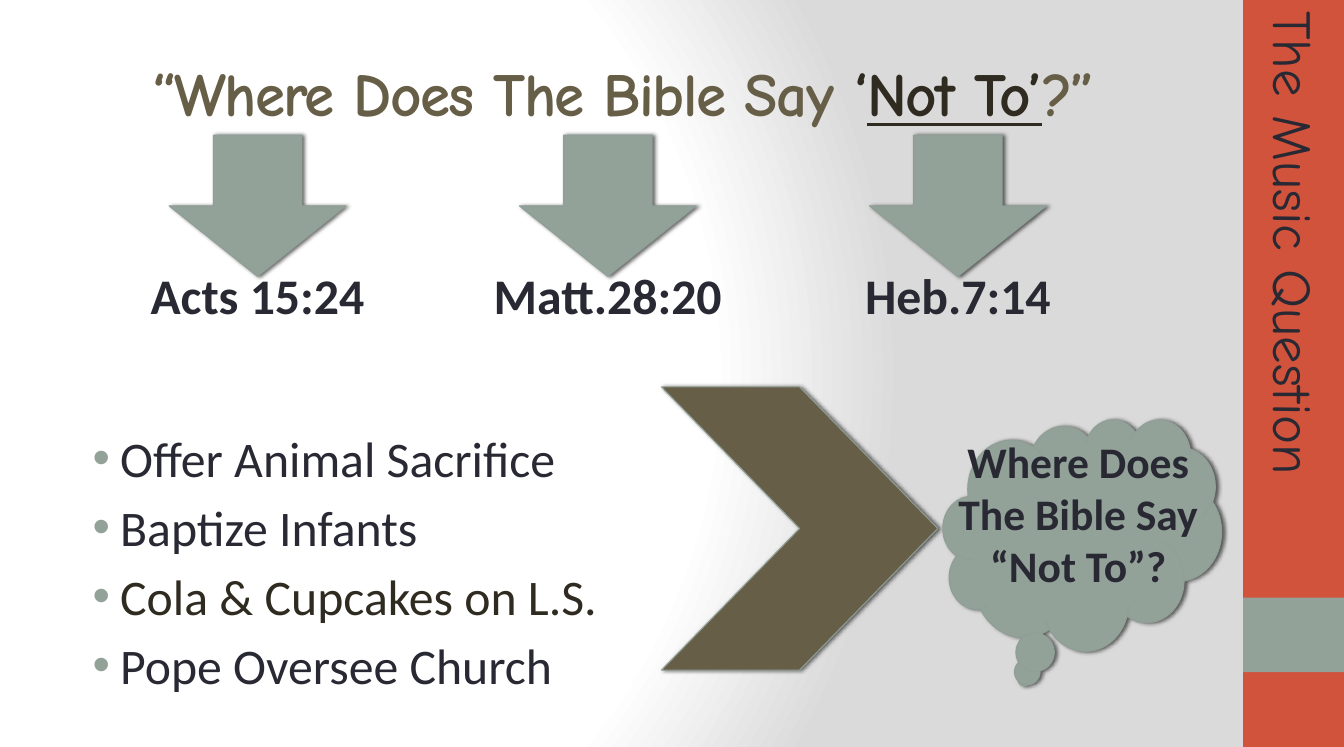
from lxml import etree
from pptx import Presentation
from pptx.dml.color import RGBColor
from pptx.enum.shapes import MSO_SHAPE
from pptx.enum.text import MSO_ANCHOR, MSO_AUTO_SIZE, PP_ALIGN
from pptx.oxml import parse_xml
from pptx.oxml.ns import nsdecls, qn
from pptx.util import Inches, Pt

CENTER, LEFT = PP_ALIGN.CENTER, PP_ALIGN.LEFT
MIDDLE, TOP = MSO_ANCHOR.MIDDLE, MSO_ANCHOR.TOP
NO_AUTOFIT = MSO_AUTO_SIZE.NONE
RECTANGLE, CHEVRON = MSO_SHAPE.RECTANGLE, MSO_SHAPE.CHEVRON
CLOUD, DOWN_ARROW = MSO_SHAPE.CLOUD_CALLOUT, MSO_SHAPE.DOWN_ARROW

# Content
TITLE_RUNS = [  # text, colour, underlined
    ("“Where Does The Bible Say ", "675E47", False),
    ("‘", "2F2B20", False),
    ("Not To’", "2F2B20", True),
    ("?”", "675E47", False),
]
VERSES = ["Acts 15:24", "Matt.28:20", "Heb.7:14"]
PRACTICES = [
    ("Offer Animal Sacrifice", "292934"),
    ("Baptize Infants", "292934"),
    ("Cola & Cupcakes on L.S.", "2F2B20"),
    ("Pope Oversee Church", "292934"),
]
QUESTION = "Where Does The Bible Say “Not To”?"
SERIES = "The Music Question"

# Style
BODY_FONT, DISPLAY_FONT = "Calibri", "Comic Neue"
INK, SAGE, OLIVE, RED, EDGE = "292934", "93A299", "675E47", "D2533C", "8F9F96"
BACKGROUND_STOPS = [(0, "FFFFFF"), (75, "FFFFFF"), (100, "DADADA")]

# Grid, in inches
WIDTH, HEIGHT = 18, 10
BAND_WIDTH = 1.35
BAND_LEFT = WIDTH - BAND_WIDTH
FIRST_VERSE_CENTER, VERSE_PITCH = 3.45, 4.69
ARROW_WIDTH, ARROW_HEIGHT = 2.37, 1.89
VERSE_WIDTH, VERSE_HEIGHT = 4.71, 0.96
SERIES_LENGTH, SERIES_HEIGHT = 8, 1.04


def color(hex_string):
    return RGBColor.from_string(hex_string)


def box(left, top, width, height):
    return [Inches(length) for length in (left, top, width, height)]


def add_block(slide, kind, place, fill, raised=True):
    """Add a filled shape; a raised one has a thin edge and a soft shadow."""
    shape = slide.shapes.add_shape(kind, *box(*place))
    shape.fill.solid()
    shape.fill.fore_color.rgb = color(fill)
    shape.shadow.inherit = False
    if not raised:
        shape.line.fill.background()
        return
    shape.line.color.rgb = color(EDGE)
    shape.line.width = Pt(1)
    shape.element.spPr.find(qn("a:effectLst")).append(parse_xml(
        f'<a:outerShdw {nsdecls("a")} blurRad="{Pt(4)}" dist="{Pt(2)}" dir="0">'
        '<a:srgbClr val="000000"><a:alpha val="60000"/></a:srgbClr></a:outerShdw>'))


def set_frame(frame, anchor=TOP):
    frame.word_wrap = True
    frame.auto_size = NO_AUTOFIT
    frame.vertical_anchor = anchor
    frame.margin_left = frame.margin_right = Inches(0.15)
    frame.margin_top = frame.margin_bottom = Inches(0.07)


def set_font(paragraph, size, name=BODY_FONT, ink=INK, bold=False):
    font = paragraph.font
    font.size, font.name, font.bold = Pt(size), name, bold
    font.color.rgb = color(ink)


def add_text(slide, place, text, size, name=BODY_FONT, bold=True, align=CENTER):
    text_box = slide.shapes.add_textbox(*box(*place))
    set_frame(text_box.text_frame)
    paragraph = text_box.text_frame.paragraphs[0]
    paragraph.text = text
    paragraph.alignment = align
    set_font(paragraph, size, name, bold=bold)
    return text_box


def add_bullet(paragraph):
    properties = paragraph._p.get_or_add_pPr()
    properties.set("marL", str(Inches(0.56)))
    properties.set("indent", str(Inches(-0.37)))
    bullet_color = etree.SubElement(properties, qn("a:buClr"))
    etree.SubElement(bullet_color, qn("a:srgbClr"), val=SAGE)
    etree.SubElement(properties, qn("a:buFont"), typeface="Arial")
    etree.SubElement(properties, qn("a:buChar"), char="•")


def set_background(slide):
    slide.background.fill.gradient()
    gradient = next(slide.element.iter(qn("a:gradFill")))
    for child in list(gradient):
        gradient.remove(child)
    stops = etree.SubElement(gradient, qn("a:gsLst"))
    for position, shade in BACKGROUND_STOPS:
        stop = etree.SubElement(stops, qn("a:gs"), pos=str(position * 1000))
        etree.SubElement(stop, qn("a:srgbClr"), val=shade)
    circle = etree.SubElement(gradient, qn("a:path"), {"path": "circle"})
    etree.SubElement(circle, qn("a:fillToRect"),
                     l="20000", t="50000", r="100000", b="50000")


def set_title(slide):
    title = slide.shapes.title
    title.left, title.top, title.width, title.height = box(0, 0.4, 16.7, 1.67)
    set_frame(title.text_frame, MIDDLE)
    paragraph = title.text_frame.paragraphs[0]
    paragraph.alignment = CENTER
    set_font(paragraph, 59, DISPLAY_FONT, OLIVE, bold=True)
    for text, ink, underlined in TITLE_RUNS:
        run = paragraph.add_run()
        run.text = text
        run.font.color.rgb = color(ink)
        run.font.underline = underlined
        run._r.get_or_add_rPr().set("spc", "-150")


def add_practices(slide):
    text_box = slide.shapes.add_textbox(*box(0.9, 5.65, 7.9, 3.68))
    frame = text_box.text_frame
    set_frame(frame)
    for index, (text, ink) in enumerate(PRACTICES):
        paragraph = frame.add_paragraph() if index else frame.paragraphs[0]
        paragraph.text = text
        add_bullet(paragraph)
        paragraph.space_before = Pt(9 if index else 0)
        set_font(paragraph, 48, ink=ink)


def main():
    presentation = Presentation()
    presentation.slide_width, presentation.slide_height = Inches(WIDTH), Inches(HEIGHT)
    slide = presentation.slides.add_slide(presentation.slide_layouts[5])
    set_background(slide)
    add_block(slide, RECTANGLE, (BAND_LEFT, 0, BAND_WIDTH, HEIGHT), RED, raised=False)
    add_block(slide, RECTANGLE, (BAND_LEFT, 8, BAND_WIDTH, 1), SAGE, raised=False)
    add_block(slide, CHEVRON, (8.86, 5.18, 3.7, 3.79), OLIVE)
    add_block(slide, CLOUD, (12.63, 5.61, 3.73, 3.1), SAGE)
    add_practices(slide)
    add_text(slide, (12.63, 5.75, 3.62, 2.27), QUESTION, 42)

    series_center = BAND_LEFT + BAND_WIDTH / 2 + 0.02
    series = add_text(
        slide,
        (series_center - SERIES_LENGTH / 2, (SERIES_LENGTH - SERIES_HEIGHT) / 2,
         SERIES_LENGTH, SERIES_HEIGHT),
        SERIES, 53, DISPLAY_FONT, bold=False, align=LEFT)
    series.rotation = 90

    set_title(slide)
    for index, verse in enumerate(VERSES):
        center = FIRST_VERSE_CENTER + index * VERSE_PITCH
        add_block(slide, DOWN_ARROW,
                  (center - ARROW_WIDTH / 2, 1.81, ARROW_WIDTH, ARROW_HEIGHT), SAGE)
        add_text(slide, (center - VERSE_WIDTH / 2, 3.48, VERSE_WIDTH, VERSE_HEIGHT),
                 verse, 48)
    presentation.save("out.pptx")


if __name__ == "__main__":
    main()
